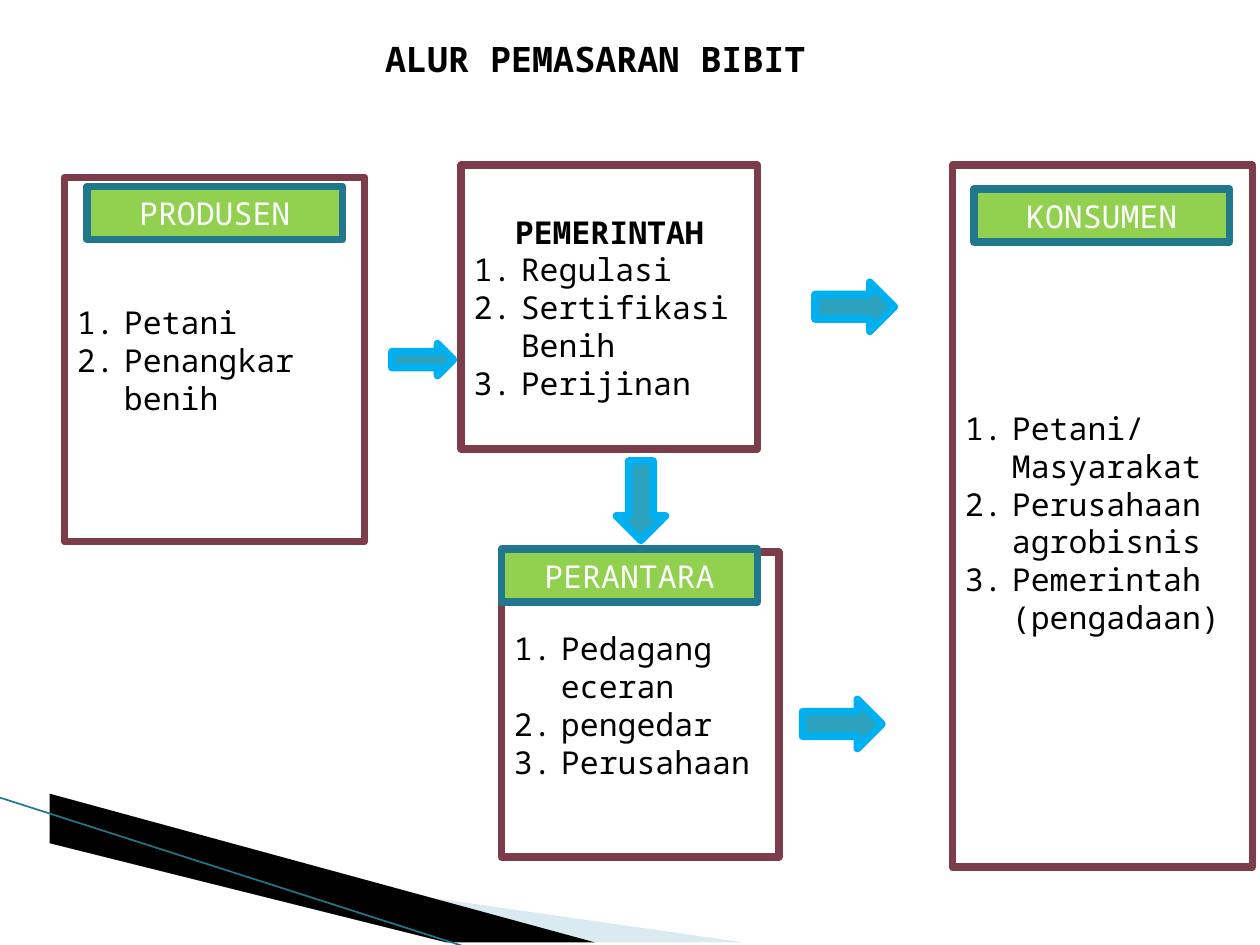
from lxml import etree
from pptx import Presentation
from pptx import util as u
from pptx.dml.color import RGBColor
from pptx.enum import shapes, text
from pptx.oxml import ns

FONT = "Noto Sans Mono"
EDGE = 4.33
HEAD_W, HEAD_H = 5.16, 1.07
INDENT = u.Cm(0.95)


def rgb(value):
    return RGBColor.from_string(value)


def cm(*values):
    return [u.Cm(v) for v in values]


def paint(sp, fill, line=None):
    sp.shadow.inherit = False
    sp.fill.solid()
    sp.fill.fore_color.rgb = rgb(fill)
    if line:
        sp.line.color.rgb = rgb(line)
        sp.line.width = u.Pt(EDGE)
    else:
        sp.line.fill.background()


def format_font(p, size=18, color="000000", bold=False):
    values = {"name": FONT, "size": u.Pt(size), "bold": bold}
    for r in p.runs:
        for key, value in values.items():
            setattr(r.font, key, value)
        r.font.color.rgb = rgb(color)


def number(p):
    pPr = p._p.get_or_add_pPr()
    pPr.set("marL", str(INDENT))
    pPr.set("indent", str(-INDENT))
    etree.SubElement(pPr, ns.qn("a:buAutoNum"), type="arabicPeriod")


def add_rect(s, box, fill, line):
    sp = s.shapes.add_shape(shapes.MSO_SHAPE.RECTANGLE, *cm(*box))
    paint(sp, fill, line)
    sp.text_frame.word_wrap = True
    sp.text_frame.vertical_anchor = text.MSO_ANCHOR.MIDDLE
    return sp


def add_title(s, box, words):
    sp = s.shapes.title
    sp.left, sp.top, sp.width, sp.height = cm(*box)
    tf = sp.text_frame
    tf.text = words
    tf.vertical_anchor = text.MSO_ANCHOR.MIDDLE
    p = tf.paragraphs[0]
    p.alignment = text.PP_ALIGN.CENTER
    format_font(p, size=20, bold=True)


def add_actor(s, box, items, heading=None, header=None, inset=0.13):
    """Framed numbered list, with a bold heading inside or a green header
    placed at an offset from the corner of the box."""
    tf = add_rect(s, box, "FFFFFF", "7D3C4A").text_frame
    tf.margin_top = u.Cm(inset)
    lines = [heading] * bool(heading) + items
    for i, words in enumerate(lines):
        p = tf.add_paragraph() if i else tf.paragraphs[0]
        p.text = words
        is_heading = words == heading
        p.alignment = text.PP_ALIGN.CENTER if is_heading else text.PP_ALIGN.LEFT
        if not is_heading:
            number(p)
        format_font(p, bold=is_heading)
    if header:
        words, dx, dy = header
        bar = (box[0] + dx, box[1] + dy, HEAD_W, HEAD_H)
        p = add_rect(s, bar, "92D050", "21788D").text_frame.paragraphs[0]
        p.text = words
        p.alignment = text.PP_ALIGN.CENTER
        format_font(p, color="FFFFFF")


def add_arrow(s, box, rotation=0):
    sp = s.shapes.add_shape(shapes.MSO_SHAPE.RIGHT_ARROW, *cm(*box))
    paint(sp, "2DA2BF", "00B0F0")
    sp.rotation = rotation


def add_wedge(s, x, y, points, fill, alpha=None):
    corners = [(x + dx, y + dy) for dx, dy in points]
    builder = s.shapes.build_freeform(*corners[0], scale=u.Cm(1))
    builder.add_line_segments(corners[1:], close=True)
    sp = builder.convert_to_shape()
    paint(sp, fill)
    if alpha:
        clr = sp._element.spPr.find(ns.qn("a:solidFill"))[0]
        etree.SubElement(clr, ns.qn("a:alpha"), val=str(alpha * 1000))


def add_corner(s, x, y):
    # Pale and black wedges, then the thin edge line
    add_wedge(s, x + 1.4, y + 0.43,
              [(0, 0.03), (13.72, 2.57), (10.18, 2.57), (0, 0)], "A0CBDC", 40)
    add_wedge(s, x + 1.35, y + 0.4,
              [(0, 0), (10.26, 2.59), (8.1, 2.62), (0.03, 0.03)], "000000")
    line = s.shapes.add_connector(shapes.MSO_CONNECTOR.STRAIGHT,
                                  *cm(x, y, x + 9.42, y + 3.02))
    line.line.color.rgb = rgb("21788D")
    line.line.width = u.Pt(0.95)
    etree.SubElement(line._element.spPr, ns.qn("a:effectLst"))


def main():
    prs = Presentation()
    prs.slide_width, prs.slide_height = cm(25.4, 19.05)
    s = prs.slides.add_slide(prs.slide_layouts[5])

    add_corner(s, 0, 16.08)
    add_title(s, (3.18, 0.58, 17.65, 1.19), "ALUR PEMASARAN BIBIT")

    # Actors in the seedling market
    add_actor(s, (1.3, 3.58, 6.05, 7.34), ["Petani", "Penangkar benih"],
              header=("PRODUSEN", 0.45, 0.18))
    add_actor(s, (10.11, 11.13, 5.59, 6.15),
              ["Pedagang eceran", "pengedar", "Perusahaan"],
              header=("PERANTARA", 0, -0.06))
    add_actor(s, (19.2, 3.33, 6.05, 14.15),
              ["Petani/Masyarakat", "Perusahaan agrobisnis",
               "Pemerintah (pengadaan)"],
              header=("KONSUMEN", 0.43, 0.48), inset=0.38)
    add_actor(s, (9.3, 3.33, 5.97, 5.72),
              ["Regulasi", "Sertifikasi Benih", "Perijinan"],
              heading="PEMERINTAH")

    # Flow between the actors
    add_arrow(s, (7.9, 6.93, 1.24, 0.64))
    add_arrow(s, (16.43, 5.69, 1.6, 0.99))
    add_arrow(s, (12.12, 9.6, 1.6, 0.99), rotation=90)
    add_arrow(s, (16.18, 14.1, 1.6, 0.99))

    prs.save("out.pptx")


if __name__ == "__main__":
    main()
